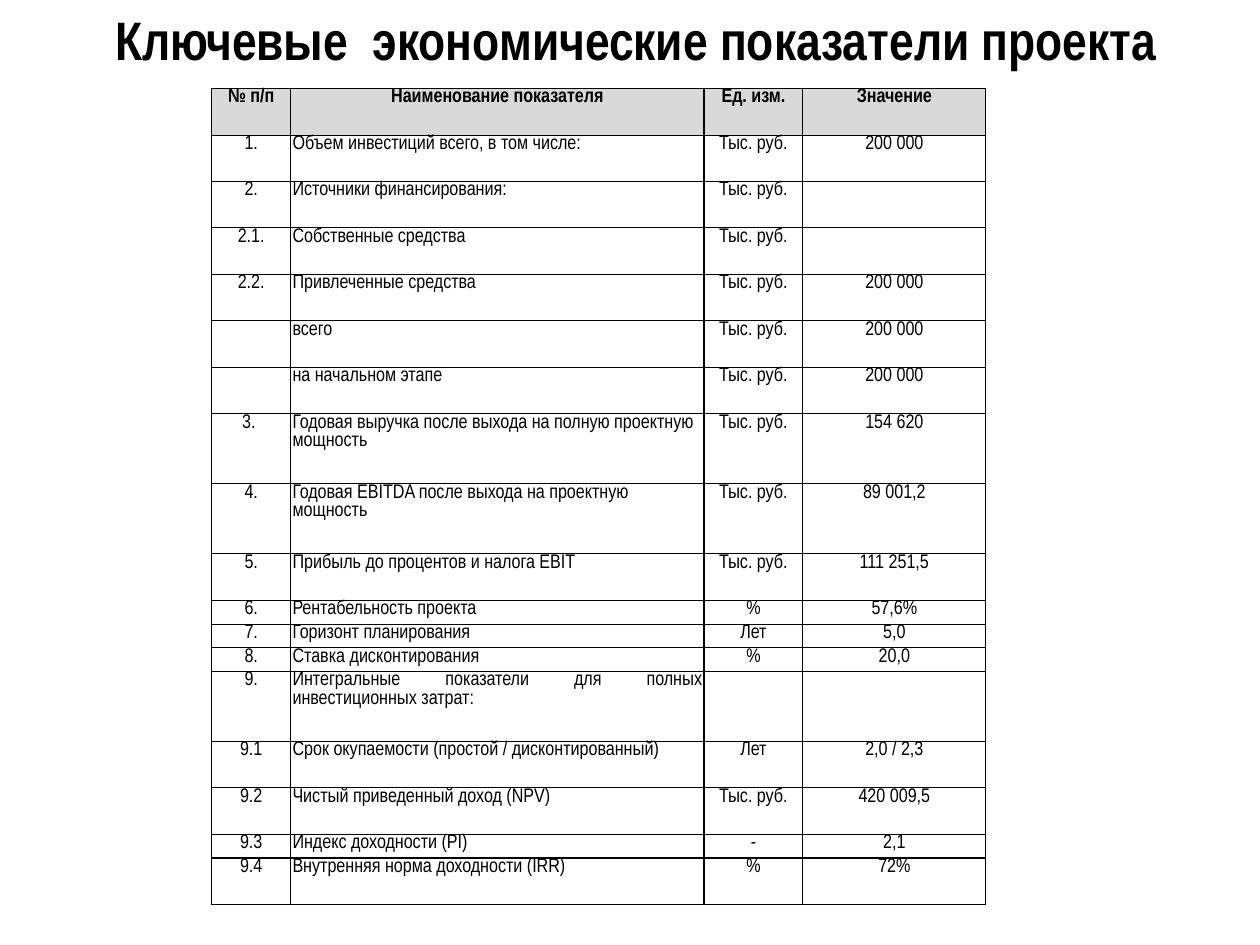
import lxml.etree
import pptx
import pptx.dml.color
import pptx.enum.text
import pptx.oxml.ns
import pptx.util

PX = pptx.util.Inches(1) // 225
FONT = "Arial Narrow"
COLORS = {"text": "000000", "border": "000000", "header": "D9D9D9"}

ALIGN = pptx.enum.text.PP_ALIGN
TOP = pptx.enum.text.MSO_ANCHOR.TOP

COLUMN_WIDTHS = [202, 1049, 251, 465]
SHORT, NORMAL, TALL = 60, 118, 178
TH_RUB = "Тыс. руб."
HEADER = ("№ п/п", "Наименование показателя", "Ед. изм.", "Значение")
# Row height, name alignment, then the four cell texts.
INDICATORS = [
    (NORMAL, ALIGN.JUSTIFY, "1.", "Объем инвестиций всего, в том числе:", TH_RUB, "200 000"),
    (NORMAL, ALIGN.JUSTIFY, "2.", "Источники финансирования:", TH_RUB, ""),
    (NORMAL, ALIGN.JUSTIFY, "2.1.", "Собственные средства", TH_RUB, ""),
    (NORMAL, ALIGN.JUSTIFY, "2.2.", "Привлеченные средства", TH_RUB, "200 000"),
    (NORMAL, ALIGN.JUSTIFY, "", "всего", TH_RUB, "200 000"),
    (NORMAL, ALIGN.JUSTIFY, "", "на начальном этапе", TH_RUB, "200 000"),
    (TALL, ALIGN.LEFT, "3. ", "Годовая выручка после выхода на полную проектную мощность",
     TH_RUB, "154 620"),
    (TALL, ALIGN.LEFT, "4.", "Годовая EBITDA после выхода на проектную мощность",
     TH_RUB, "89 001,2"),
    (NORMAL, ALIGN.JUSTIFY, "5.", "Прибыль до процентов и налога EBIT", TH_RUB, "111 251,5"),
    (SHORT, ALIGN.JUSTIFY, "6.", "Рентабельность проекта", "%", "57,6%"),
    (SHORT, ALIGN.JUSTIFY, "7.", "Горизонт планирования ", "Лет", "5,0"),
    (SHORT, ALIGN.JUSTIFY, "8.", "Ставка дисконтирования", "%", "20,0"),
    (TALL, ALIGN.JUSTIFY, "9.", "Интегральные показатели для полных инвестиционных затрат:",
     "", ""),
    (NORMAL, ALIGN.JUSTIFY, "9.1", "Срок окупаемости (простой / дисконтированный)",
     "Лет", "2,0 / 2,3"),
    (NORMAL, ALIGN.JUSTIFY, "9.2", "Чистый приведенный доход (NPV)", TH_RUB, "420 009,5"),
    (SHORT, ALIGN.JUSTIFY, "9.3", "Индекс доходности (PI)", "-", "2,1"),
    (NORMAL, ALIGN.JUSTIFY, "9.4", "Внутренняя норма доходности (IRR)", "%", "72%"),
]


def px(n):
    return pptx.util.Emu(n * PX)


def rgb(name):
    return pptx.dml.color.RGBColor.from_string(COLORS[name])


def write(tf, text, size=16, bold=False, align=ALIGN.CENTER):
    p = tf.paragraphs[0]
    p.alignment = align
    p.font.size = pptx.util.Pt(size)
    if text:
        r = p.add_run()
        r.text = text
        r.font.name = FONT
        r.font.size = pptx.util.Pt(size)
        r.font.bold = bold
        r.font.color.rgb = rgb("text")


def add_borders(cell):
    tc_pr = cell._tc.get_or_add_tcPr()
    qn = pptx.oxml.ns.qn
    for side in "LRTB":
        ln = lxml.etree.SubElement(tc_pr, qn(f"a:ln{side}"), w=str(pptx.util.Pt(1)))
        fill = lxml.etree.SubElement(ln, qn("a:solidFill"))
        lxml.etree.SubElement(fill, qn("a:srgbClr"), val=COLORS["border"])


def format_cell(cell, text, header=False, align=ALIGN.CENTER):
    cell.margin_left = cell.margin_right = px(4)
    cell.margin_top = cell.margin_bottom = 0
    cell.vertical_anchor = TOP
    add_borders(cell)
    if header:
        cell.fill.solid()
        cell.fill.fore_color.rgb = rgb("header")
    else:
        cell.fill.background()
    write(cell.text_frame, text, bold=header, align=align)


def add_indicator_table(s):
    rows = [(NORMAL, ALIGN.CENTER, *HEADER), *INDICATORS]
    height = sum(row[0] for row in rows)
    table = s.shapes.add_table(len(rows), len(COLUMN_WIDTHS), px(537), px(225),
                               px(sum(COLUMN_WIDTHS)), px(height)).table
    table.horz_banding = False
    for column, width in zip(table.columns, COLUMN_WIDTHS):
        column.width = px(width)
    for i, (row_height, name_align, *texts) in enumerate(rows):
        table.rows[i].height = px(row_height)
        for j, text in enumerate(texts):
            align = name_align if j == 1 else ALIGN.CENTER
            format_cell(table.cell(i, j), text, header=i == 0, align=align)


def set_title(s, text):
    sp = s.shapes.title
    sp.left, sp.top, sp.width, sp.height = px(270), px(4), px(2835), px(189)
    tf = sp.text_frame
    tf.word_wrap = True
    tf.auto_size = pptx.enum.text.MSO_AUTO_SIZE.SHAPE_TO_FIT_TEXT
    tf.vertical_anchor = TOP
    write(tf, text, size=44, bold=True, align=ALIGN.LEFT)


def main():
    prs = pptx.Presentation()
    prs.slide_width, prs.slide_height = px(3200), px(2400)
    s = prs.slides.add_slide(prs.slide_layouts[5])
    add_indicator_table(s)
    set_title(s, "Ключевые  экономические показатели проекта")
    prs.save("out.pptx")


if __name__ == "__main__":
    main()
